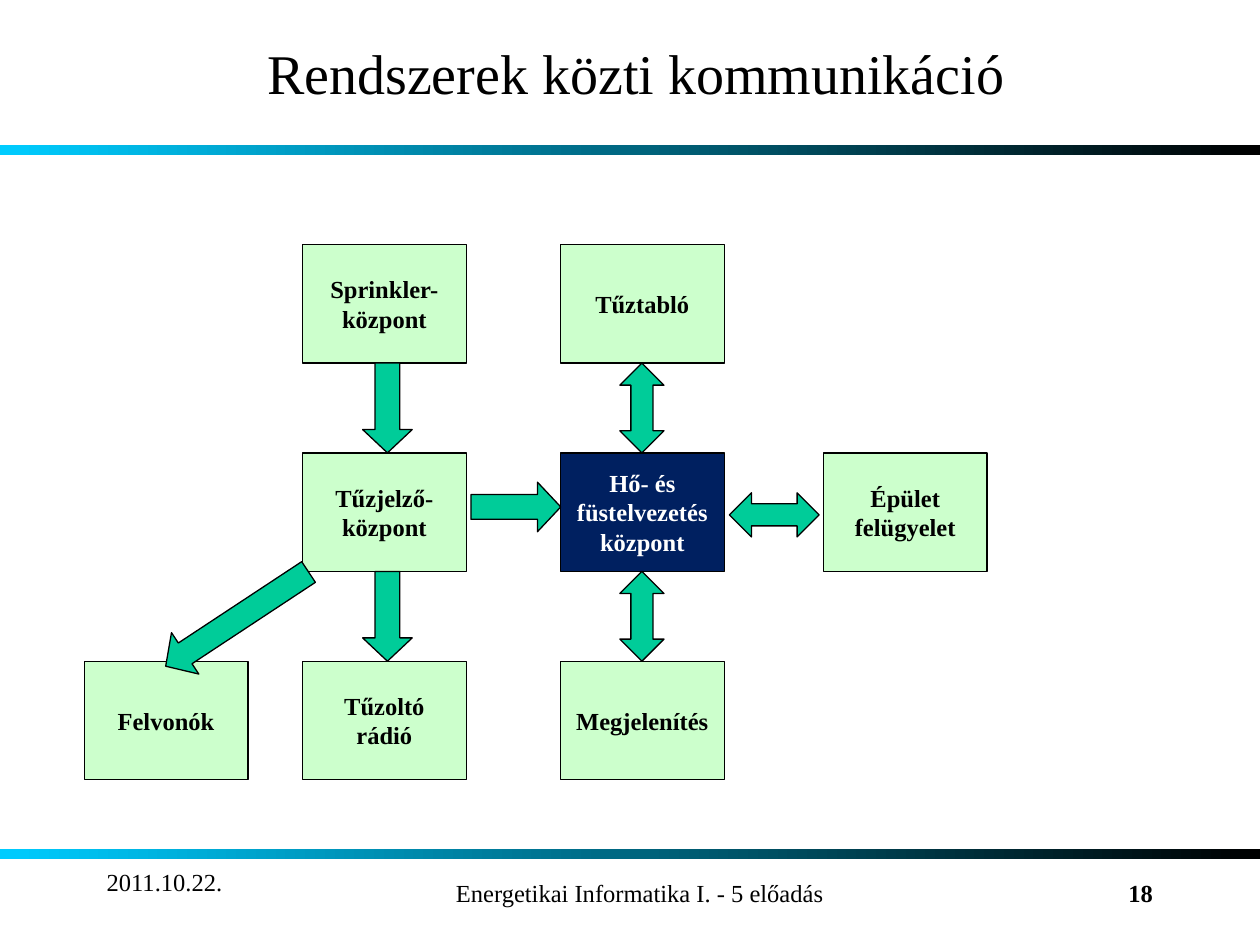
from dataclasses import dataclass

from pptx import Presentation
from pptx.dml.color import RGBColor
from pptx.enum import shapes as sh, text as tx
from pptx.util import Cm, Pt

HUE = {"ink": "000000", "white": "FFFFFF", "mint": "CCFFCC", "navy": "002060",
       "green": "00CC99", "cyan": "00CCFF"}
SERIF = "Times New Roman"
COLS = (1.7, 6.1, 11.3, 16.6)
TOP, STEP = 4.93, 4.2
WIDE, HIGH = 3.3, 2.39
GAP = STEP - HIGH
MIDS = [TOP + HIGH + GAP / 2 + STEP * i for i in range(2)]
ONE, TWO = sh.MSO_SHAPE.RIGHT_ARROW, sh.MSO_SHAPE.LEFT_RIGHT_ARROW
LEFT, MID, RIGHT = tx.PP_ALIGN.LEFT, tx.PP_ALIGN.CENTER, tx.PP_ALIGN.RIGHT


@dataclass
class Box:
    text: str
    col: int
    row: int
    fill: str = "mint"
    ink: str = "ink"


@dataclass
class Arrow:
    """A block arrow, placed by its centre."""
    kind: sh.MSO_SHAPE
    x: float
    y: float
    turn: float = 0
    size: float = GAP


@dataclass
class Label:
    text: str
    x: float
    y: float
    w: float
    h: float
    align: tx.PP_ALIGN = LEFT
    size: int = 14
    bold: bool = False
    anchor: tx.MSO_ANCHOR = tx.MSO_ANCHOR.TOP


BOXES = [
    Box("Sprinkler-központ", 1, 0),
    Box("Tűztabló", 2, 0),
    Box("Tűzjelző-központ", 1, 1),
    Box("Hő- és füstelvezetés központ", 2, 1, "navy", "white"),
    Box("Épület felügyelet", 3, 1),
    Box("Felvonók", 0, 2),
    Box("Tűzoltó rádió", 1, 2),
    Box("Megjelenítés", 2, 2),
]
ARROWS = [
    *(Arrow(ONE, 7.81, y, 90) for y in MIDS),
    *(Arrow(TWO, 12.94, y, 90) for y in MIDS),
    Arrow(ONE, 10.4, 10.22),
    Arrow(TWO, 15.61, 10.38),
    Arrow(ONE, 4.78, 12.48, 146.6, 3.45),
]
LABELS = [
    Label("Rendszerek közti kommunikáció", 3.3, 0.71, 19.05, 1.47, MID, 32,
          anchor=tx.MSO_ANCHOR.MIDDLE),
    Label("2011.10.22.", 1.9, 17.35, 5.28, 1.27),
    Label("Energetikai Informatika I. - 5 előadás", 5.28, 17.58, 15.24, 1.07, MID),
    Label("18", 18.21, 17.58, 5.28, 1.07, RIGHT, bold=True),
]


def rgb(name: str) -> RGBColor:
    return RGBColor.from_string(HUE[name])


def write(frame, words: str, align: tx.PP_ALIGN, size: int, bold: bool, ink: str,
          anchor: tx.MSO_ANCHOR) -> None:
    frame.word_wrap = True
    frame.vertical_anchor = anchor
    para = frame.paragraphs[0]
    para.text, para.alignment = words, align
    font = para.font
    font.name, font.size, font.bold = SERIF, Pt(size), bold
    font.color.rgb = rgb(ink)


def add_shape(slide, kind: sh.MSO_SHAPE, x: float, y: float, w: float, h: float, fill: str):
    shape = slide.shapes.add_shape(kind, Cm(x), Cm(y), Cm(w), Cm(h))
    shape.shadow.inherit = False
    shape.fill.solid()
    shape.fill.fore_color.rgb = rgb(fill)
    shape.line.color.rgb = rgb("ink")
    shape.line.width = Pt(0.75)
    return shape


def add_band(slide, y: float) -> None:
    band = add_shape(slide, sh.MSO_SHAPE.RECTANGLE, 0, y, 25.4, 0.2, "cyan")
    band.line.fill.background()
    band.fill.gradient()
    band.fill.gradient_angle = 0
    for stop, (spot, hue) in zip(band.fill.gradient_stops, ((0, "cyan"), (1, "ink"))):
        stop.position, stop.color.rgb = spot, rgb(hue)


def add_box(slide, box: Box) -> None:
    shape = add_shape(slide, sh.MSO_SHAPE.RECTANGLE, COLS[box.col], TOP + STEP * box.row,
                      WIDE, HIGH, box.fill)
    write(shape.text_frame, box.text, MID, 14, True, box.ink, tx.MSO_ANCHOR.MIDDLE)


def add_arrow(slide, arrow: Arrow) -> None:
    high = 1 if arrow.kind == ONE else 0.89
    shape = add_shape(slide, arrow.kind, arrow.x - arrow.size / 2, arrow.y - high / 2,
                      arrow.size, high, "green")
    shape.rotation = arrow.turn
    if arrow.kind == ONE:
        shape.adjustments[1] = 0.47


def add_label(slide, label: Label) -> None:
    area = slide.shapes.add_textbox(Cm(label.x), Cm(label.y), Cm(label.w), Cm(label.h))
    write(area.text_frame, label.text, label.align, label.size, label.bold, "ink", label.anchor)


def main() -> None:
    deck = Presentation()
    deck.slide_width, deck.slide_height = Cm(25.4), Cm(19.05)
    slide = deck.slides.add_slide(deck.slide_layouts[6])
    for y in (2.92, 17.12):
        add_band(slide, y)
    for label in LABELS:
        add_label(slide, label)
    for box in BOXES:
        add_box(slide, box)
    for arrow in ARROWS:
        add_arrow(slide, arrow)
    deck.save("out.pptx")


if __name__ == "__main__":
    main()
